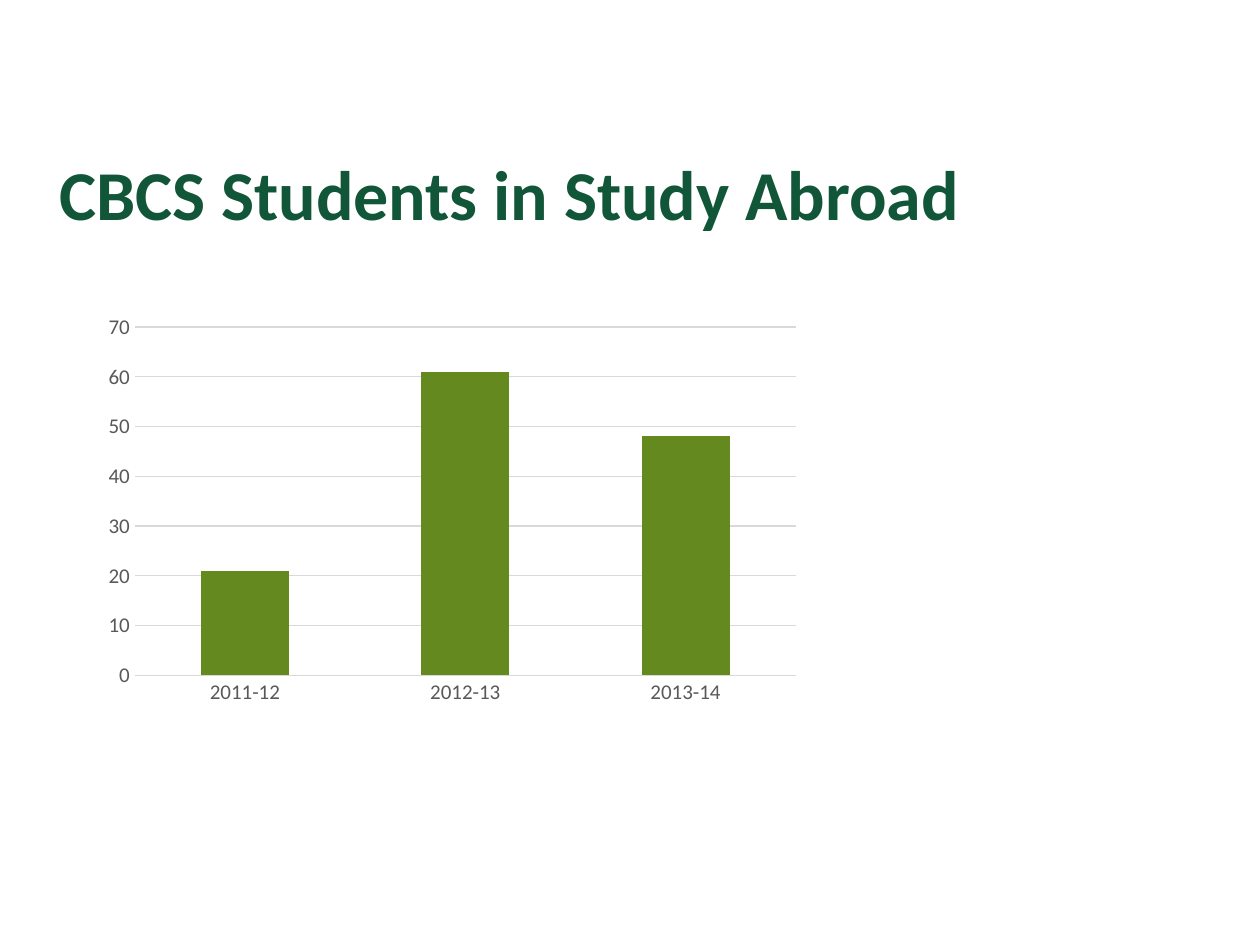
from dataclasses import dataclass

from lxml import etree
from pptx import Presentation
from pptx.chart.data import CategoryChartData
from pptx.dml.color import RGBColor
from pptx.enum.chart import XL_CHART_TYPE, XL_TICK_MARK
from pptx.enum.text import MSO_ANCHOR, PP_ALIGN
from pptx.oxml.ns import qn
from pptx.util import Pt

COLUMN = XL_CHART_TYPE.COLUMN_CLUSTERED
NO_TICK = XL_TICK_MARK.NONE
MIDDLE = MSO_ANCHOR.MIDDLE
LEFT = PP_ALIGN.LEFT
TITLE_ONLY = 5


@dataclass(frozen=True)
class Theme:
    font: str = "Calibri"
    title_size: int = 40
    label_size: int = 12
    title: str = "115639"
    label: str = "595959"
    grid: str = "D9D9D9"
    bar: str = "63891F"


def rgb(value):
    return RGBColor.from_string(value)


def style_font(font, name, size, color, bold=False):
    font.name, font.size, font.bold = name, Pt(size), bold
    font.color.rgb = rgb(color)


def write_text(tf, text, *, name, size, color, bold=False, align=LEFT, anchor=MIDDLE):
    tf.word_wrap = True
    tf.vertical_anchor = anchor
    p = tf.paragraphs[0]
    p.alignment = align
    r = p.add_run()
    r.text = text
    style_font(r.font, name, size, color, bold)


def set_inner_plot(chart, x, y, w, h):
    """Fix the plot area, without its labels, as fractions of the chart."""
    plot_area = chart._chartSpace.chart.plotArea
    for old in plot_area.findall(qn("c:layout")):
        plot_area.remove(old)
    layout = etree.Element(qn("c:layout"))
    plot_area.insert(0, layout)
    manual = etree.SubElement(layout, qn("c:manualLayout"))
    values = {"layoutTarget": "inner", "xMode": "edge", "yMode": "edge",
              "x": x, "y": y, "w": w, "h": h}
    for tag, value in values.items():
        etree.SubElement(manual, qn(f"c:{tag}")).set("val", str(value))


class SlideBuilder:
    """Holds the theme and the current slide."""

    def __init__(self, prs, theme):
        self.theme = theme
        self.s = prs.slides.add_slide(prs.slide_layouts[TITLE_ONLY])

    def title(self, text, left, top, width, height):
        t = self.theme
        sp = self.s.shapes.title
        sp.left, sp.top, sp.width, sp.height = map(Pt, (left, top, width, height))
        write_text(sp.text_frame, text, name=t.font, size=t.title_size,
                   color=t.title, bold=True)

    def column_chart(self, name, points, left, top, width, height, maximum, step):
        t = self.theme
        data = CategoryChartData()
        data.categories = list(points)
        data.add_series(name, list(points.values()))
        box = map(Pt, (left, top, width, height))
        chart = self.s.shapes.add_chart(COLUMN, *box, data).chart
        chart.has_title = chart.has_legend = False
        style_font(chart.font, t.font, t.label_size, t.label)
        set_inner_plot(chart, 0.06, 0.08, 0.9, 0.83)

        plot = chart.plots[0]
        plot.gap_width = 150
        plot.vary_by_categories = False
        fill = plot.series[0].format.fill
        fill.solid()
        fill.fore_color.rgb = rgb(t.bar)

        for axis in (chart.category_axis, chart.value_axis):
            axis.major_tick_mark = axis.minor_tick_mark = NO_TICK
            axis.format.line.fill.background()
            style_font(axis.tick_labels.font, t.font, t.label_size, t.label)
        axis = chart.value_axis
        axis.minimum_scale, axis.maximum_scale, axis.major_unit = 0, maximum, step
        line = axis.major_gridlines.format.line
        line.width = Pt(0.75)
        line.color.rgb = rgb(t.grid)


def main():
    prs = Presentation()
    prs.slide_width, prs.slide_height = Pt(720), Pt(540)
    slide = SlideBuilder(prs, Theme())
    slide.title("CBCS Students in Study Abroad", 26.64, 51.84, 612, 115.92)
    students = {"2011-12": 21, "2012-13": 61, "2013-14": 48}
    slide.column_chart("Series 1", students, 51.84, 167.76, 419.76, 239.76,
                       maximum=70, step=10)
    prs.save("out.pptx")


if __name__ == "__main__":
    main()
